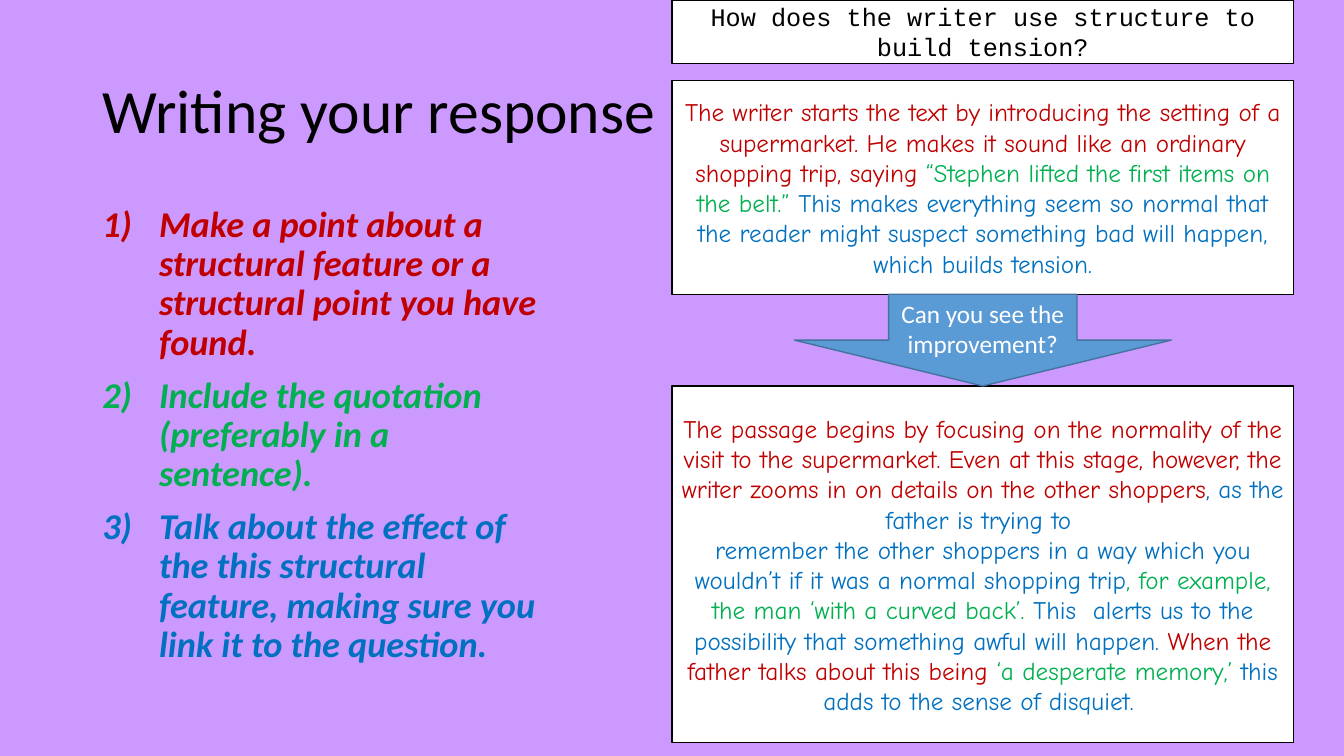
from lxml import etree
from pptx import Presentation
from pptx.dml.color import RGBColor
from pptx.enum.shapes import MSO_SHAPE as Form
from pptx.enum.text import MSO_ANCHOR as Anchor, PP_ALIGN as Align
from pptx.oxml.ns import qn
from pptx.util import Pt

BLACK = RGBColor(0x00, 0x00, 0x00)
WHITE = RGBColor(0xFF, 0xFF, 0xFF)
LILAC = RGBColor(0xCC, 0x99, 0xFF)
RED = RGBColor(0xC0, 0x00, 0x00)
GREEN = RGBColor(0x00, 0xB0, 0x50)
BLUE = RGBColor(0x00, 0x70, 0xC0)
SKY = RGBColor(0x5B, 0x9B, 0xD5)
NAVY = RGBColor(0x43, 0x73, 0x9E)

LEFT, WIDE = 480, 444

TASK = [[("How does the writer use structure to build tension?", BLACK)]]
FIRST = [[
    ("The writer starts the text by introducing the setting of a supermarket. "
     "He makes it sound like an ordinary shopping trip, saying ", RED),
    ("“Stephen lifted the first items on the belt.” ", GREEN),
    ("This makes everything seem so normal that the reader might suspect "
     "something bad will happen, which builds tension.", BLUE),
]]
BETTER = [
    [
        ("The passage begins by focusing on the normality of the visit to the "
         "supermarket. Even at this stage, however, the writer zooms in on "
         "details on the other shoppers", RED),
        (", as the father is trying to ", BLUE),
    ],
    [
        ("remember the other shoppers in a way which you wouldn’t if it was a "
         "normal shopping trip", BLUE),
        (", for example, the man ‘with a curved back’. ", GREEN),
        ("This  alerts us to the possibility that something awful will happen. ", BLUE),
        ("When the father talks about this being ", RED),
        ("‘a desperate memory,’ ", GREEN),
        ("this adds to the sense of disquiet. ", BLUE),
    ],
]
STEPS = [
    [("Make a point about a structural feature or a structural point you have found.", RED)],
    [("Include the quotation (preferably in a sentence).", GREEN)],
    [("Talk about the effect of the this structural feature, making sure you "
      "link it to the question.", BLUE)],
]


class Board:
    """Hold the slide and its style, and add each kind of element."""

    sans = "Calibri"
    hand = "Comic Neue"
    mono = "Courier New"
    size = 18
    indent = 40.5

    def __init__(self, slide):
        self.slide = slide
        fill = slide.background.fill
        fill.solid()
        fill.fore_color.rgb = LILAC

    def put(self, frame, paras, font, size, align, strong=False):
        frame.word_wrap = True
        for i, runs in enumerate(paras):
            para = frame.add_paragraph() if i else frame.paragraphs[0]
            para.alignment = align
            for text, color in runs:
                run = para.add_run()
                run.text = text
                face = run.font
                face.name, face.size = font, Pt(size)
                face.color.rgb = color
                if strong:
                    face.bold = face.italic = True

    def text(self, box, paras, size, anchor, strong=False):
        frame = self.slide.shapes.add_textbox(*map(Pt, box)).text_frame
        frame.vertical_anchor = anchor
        self.put(frame, paras, self.sans, size, Align.LEFT, strong)
        for para in frame.paragraphs:
            para.line_spacing = 0.9
        return frame

    def steps(self, box, paras, size):
        frame = self.text(box, paras, size, Anchor.TOP, strong=True)
        for para in frame.paragraphs:
            para.space_before = Pt(10)
            props = para._p.get_or_add_pPr()
            props.set("marL", str(Pt(self.indent)))
            props.set("indent", str(-Pt(self.indent)))
            mark = etree.SubElement(props, qn("a:buAutoNum"))
            mark.set("type", "arabicParenR")

    def shape(self, form, box, paras, font, fill=WHITE, edge=BLACK):
        item = self.slide.shapes.add_shape(form, *map(Pt, box))
        item.shadow.inherit = False
        item.fill.solid()
        item.fill.fore_color.rgb = fill
        item.line.color.rgb = edge
        item.line.width = Pt(1)
        item.text_frame.vertical_anchor = Anchor.MIDDLE
        self.put(item.text_frame, paras, font, self.size, Align.CENTER)

    def panel(self, top, high, paras, font):
        self.shape(Form.RECTANGLE, (LEFT, top, WIDE, high), paras, font)

    def arrow(self, box, paras):
        self.shape(Form.DOWN_ARROW, box, paras, self.sans, SKY, NAVY)


def main():
    deck = Presentation()
    deck.slide_width, deck.slide_height = Pt(960), Pt(540)
    board = Board(deck.slides.add_slide(deck.slide_layouts[6]))
    board.text((66, 28.75, 828, 104.4), [[("Writing your response", BLACK)]], 44, Anchor.MIDDLE)
    board.steps((66, 143.75, 330.5, 342.6), STEPS, 25.9)
    board.panel(57.6, 152.6, FIRST, board.hand)
    board.panel(275.75, 254.8, BETTER, board.hand)
    board.panel(0, 45.4, TASK, board.mono)
    board.arrow((567.4, 210.2, 269.2, 65.55), [[("Can you see the improvement?", WHITE)]])
    deck.save("out.pptx")


if __name__ == "__main__":
    main()
